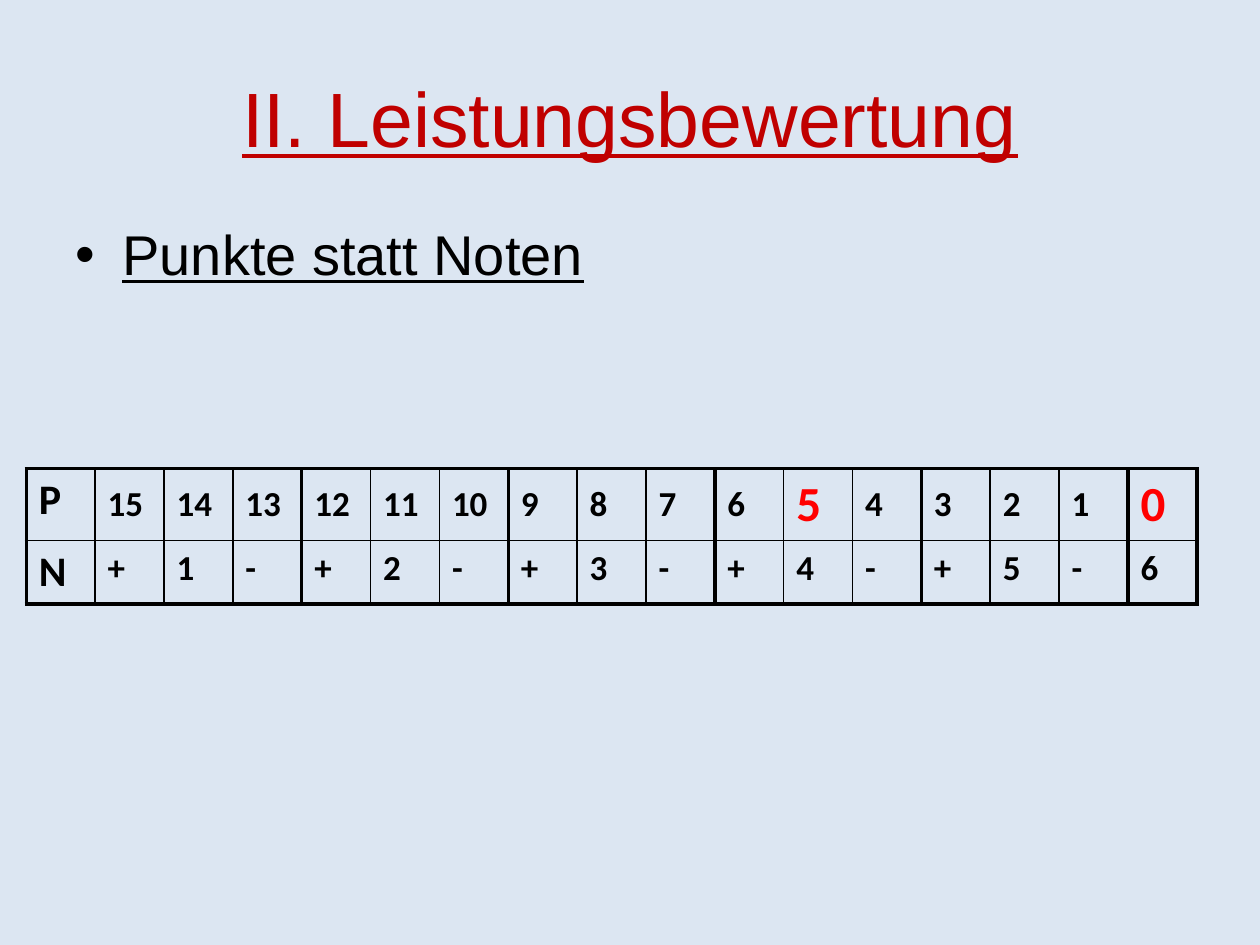
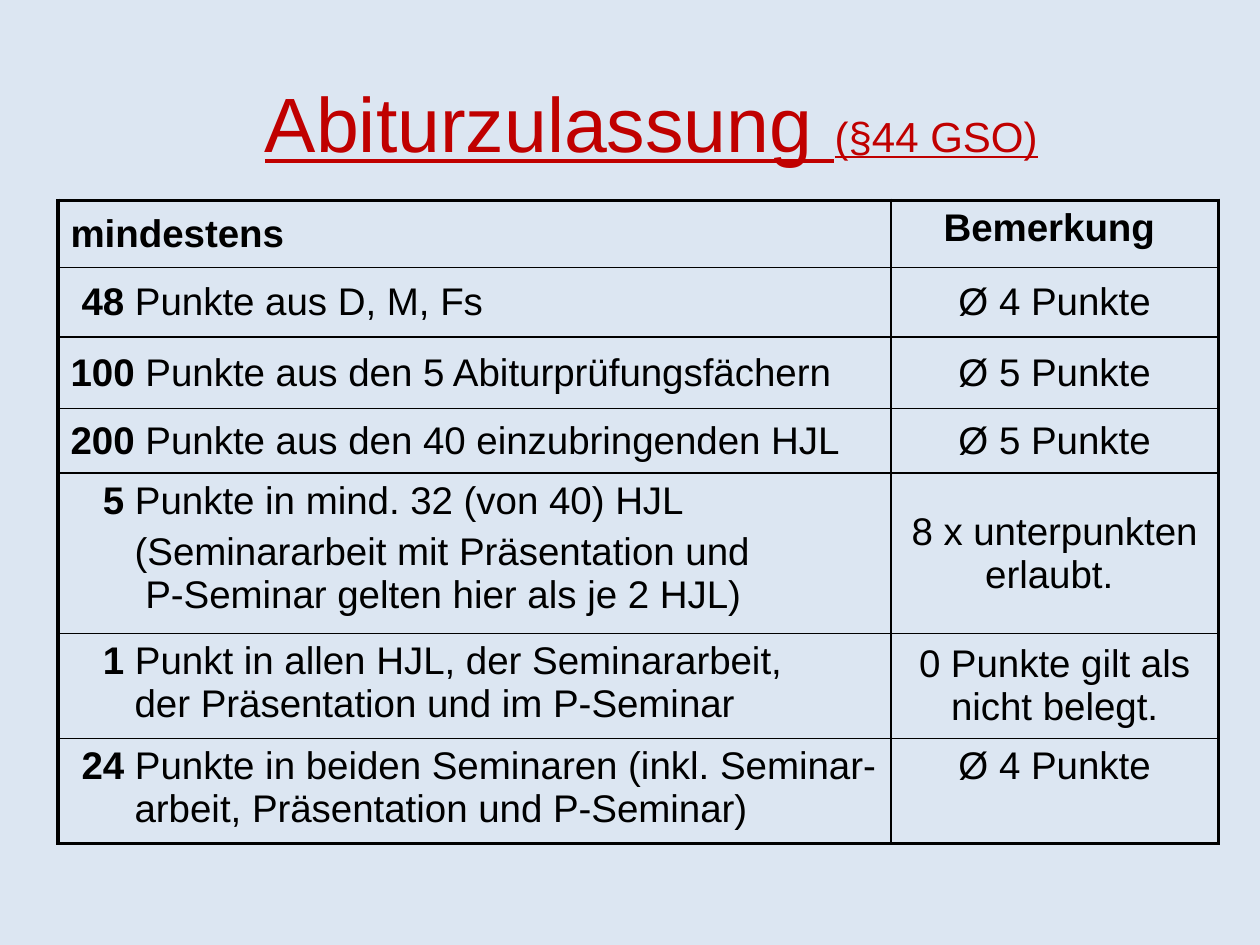
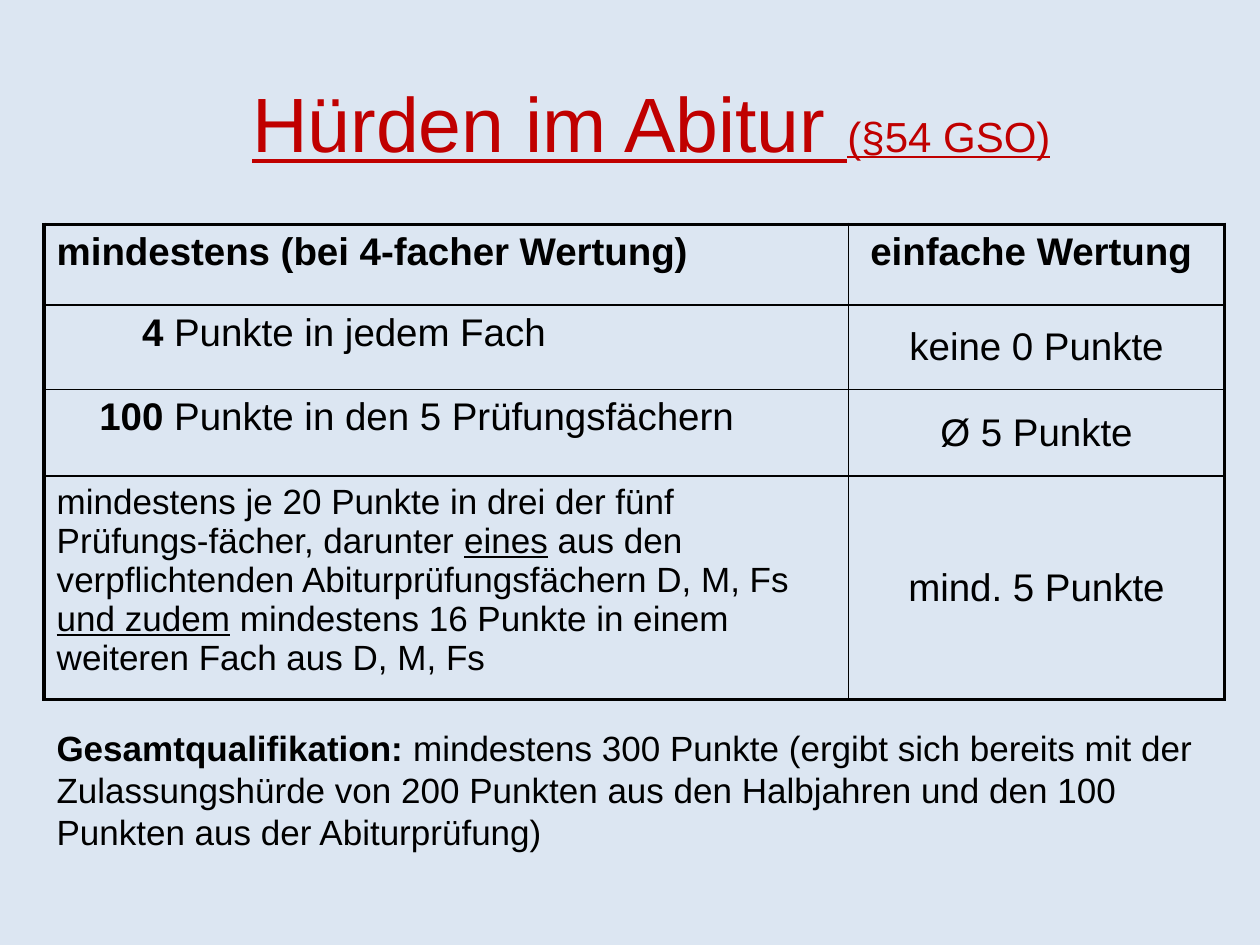
from lxml.etree import SubElement
from pptx import Presentation
from pptx.dml.color import RGBColor
from pptx.enum.text import MSO_ANCHOR, PP_ALIGN
from pptx.oxml.ns import qn
from pptx.util import Cm, Pt

BACK, RED, BLACK, HOT = "DCE6F2", "C00000", "000000", "FF0000"
THIN, THICK = 1, 2.25
BOLD = {"bold": True}
LINE = {"line": True}
MID = MSO_ANCHOR.MIDDLE


def paint(code):
    return RGBColor.from_string(code)


def write(frame, runs, size=22, font="Arial", color=BLACK, bold=False, line=False,
          align=PP_ALIGN.LEFT, left=0, first=0, before=0, space=None, mark=None):
    """Add one paragraph; runs is a string or a list of strings and (string, format) pairs."""
    para = frame.paragraphs[0]
    if para.runs:
        para = frame.add_paragraph()
    para.alignment = align
    para.space_before = Pt(before)
    para.line_spacing = space
    props = para._p.get_or_add_pPr()
    props.set("marL", str(Cm(left)))
    props.set("indent", str(Cm(first - left)))
    if mark:
        SubElement(props, qn("a:buFont")).set("typeface", font)
        SubElement(props, qn("a:buChar")).set("char", mark)
    for part in [runs] if isinstance(runs, str) else runs:
        text, form = (part, {}) if isinstance(part, str) else part
        for i, row in enumerate(text.split("\n")):
            if i:
                para.add_line_break()
            run = para.add_run()
            run.text = row
            run.font.name = font
            run.font.size = Pt(form.get("size", size))
            run.font.bold = form.get("bold", bold)
            run.font.underline = form.get("line", line)
            run.font.color.rgb = paint(color)


def add_text(slide, box, runs, anchor=MSO_ANCHOR.TOP, **form):
    frame = slide.shapes.add_textbox(*map(Cm, box)).text_frame
    frame.word_wrap = True
    frame.vertical_anchor = anchor
    write(frame, runs, **form)


def add_page(deck, title, box):
    """Blank slide with the shared background and title style."""
    slide = deck.slides.add_slide(deck.slide_layouts[6])
    slide.background.fill.solid()
    slide.background.fill.fore_color.rgb = paint(BACK)
    add_text(slide, box, title, MID, size=44, color=RED, line=True, align=PP_ALIGN.CENTER)
    return slide


def edge(cell, side, width):
    ln = SubElement(cell._tc.get_or_add_tcPr(), qn("a:" + side), w=str(Pt(width)))
    fill = SubElement(ln, qn("a:solidFill"))
    SubElement(fill, qn("a:srgbClr")).set("val", BLACK)


def add_grid(slide, spot, cols, rows, heavy=()):
    """Clear table with thick outer borders and thick verticals at the heavy edges."""
    wide, high = len(cols), len(rows)
    table = slide.shapes.add_table(high, wide, *map(Cm, (*spot, sum(cols), sum(rows)))).table
    table.first_row = table.horz_banding = False
    for col, width in zip(table.columns, cols):
        col.width = Cm(width)
    for row, height in zip(table.rows, rows):
        row.height = Cm(height)
    thick = {0, wide, *heavy}
    for r in range(high):
        for c in range(wide):
            cell = table.cell(r, c)
            edge(cell, "lnL", THICK if c in thick else THIN)
            edge(cell, "lnR", THICK if c + 1 in thick else THIN)
            edge(cell, "lnT", THICK if r == 0 else THIN)
            edge(cell, "lnB", THICK if r == high - 1 else THIN)
            cell.fill.background()
    return table


def fill_scale(table):
    """Points in the top row, matching grades below."""
    points = ["P", *map(str, range(15, -1, -1))]
    grades = ["N"]
    for grade in "12345":
        grades += ["+", grade, "-"]
    grades.append("6")
    for r, texts in enumerate((points, grades)):
        for c, text in enumerate(texts):
            cell = table.cell(r, c)
            hot = r == 0 and text in ("5", "0")
            cell.vertical_anchor = MID if r == 0 and c else MSO_ANCHOR.TOP
            write(cell.text_frame, text, font="Calibri", bold=True,
                  size=28 if hot else 20 if c else 24, color=HOT if hot else BLACK)


def fill_rules(table, rules):
    """Each rule: left paragraphs, right text, and which cells are centred upright."""
    for r, (paras, note, mids) in enumerate(rules):
        left, right = table.cell(r, 0), table.cell(r, 1)
        for cell, mid in zip((left, right), mids):
            cell.vertical_anchor = MID if mid else MSO_ANCHOR.TOP
        for runs, form in paras:
            write(left.text_frame, runs, bold=r == 0, **form)
        write(right.text_frame, note, bold=r == 0, align=PP_ALIGN.CENTER)


def rule(count, text, first=0, left=1.29):
    return [(count, BOLD), " " + text], {"first": first, "left": left}


def show_scale(deck):
    slide = add_page(deck, "II. Leistungsbewertung", (1.27, 0.76, 22.86, 3.18))
    add_text(slide, (1.27, 4.45, 22.86, 6.27), "Punkte statt Noten", size=32, line=True,
             left=0.95, before=8, space=0.9, mark="•")
    table = add_grid(slide, (0.53, 9.45), [23.6 / 17] * 17, [1.45, 1.28], range(4, 17, 3))
    fill_scale(table)


def show_entry(deck):
    slide = add_page(deck, ["Abiturzulassung ", ("(§44 GSO)", {"size": 24})], SIDE)
    table = add_grid(slide, (1.17, 4.04), [16.79, 6.6],
                     [1.35, 1.4, 1.45, 1.3, 3.23, 2.11, 2.11])
    fill_rules(table, [
        ([("mindestens", {})], "Bemerkung ", (1, 0)),
        ([rule("48", "Punkte aus D, M, Fs", 0.22)], "Ø 4 Punkte", (1, 1)),
        ([rule("100", "Punkte aus den 5 Abiturprüfungsfächern")], "Ø 5 Punkte", (1, 1)),
        ([rule("200", "Punkte aus den 40 einzubringenden HJL")], "Ø 5 Punkte", (1, 1)),
        ([rule("5", "Punkte in mind. 32 (von 40) HJL", 0.65),
          ("(Seminararbeit mit Präsentation und\n P-Seminar gelten hier als je 2 HJL)",
           {"first": 1.29, "left": 1.29, "before": 4.4})],
         "8 x unterpunkten erlaubt. ", (0, 1)),
        ([rule("1", "Punkt in allen HJL, der Seminararbeit,\n"
               "der Präsentation und im P-Seminar", 0.65)],
         "0 Punkte gilt als nicht belegt.", (0, 1)),
        ([rule("24", "Punkte in beiden Seminaren (inkl. Seminar-\n"
               "arbeit, Präsentation und P-Seminar)", 0.22)], "Ø 4 Punkte", (0, 0)),
    ])


def show_hurdles(deck):
    slide = add_page(deck, ["Hürden im Abitur ", ("(§54 GSO)", {"size": 24})], SIDE)
    table = add_grid(slide, (0.89, 4.52), [16.21, 7.59], [1.63, 1.7, 1.75, 4.5])
    fill_rules(table, [
        ([("mindestens (bei 4-facher Wertung)", {})], "einfache Wertung ", (0, 0)),
        ([rule("4", "Punkte in jedem Fach", 1.72, 1.72)], "keine 0 Punkte", (0, 1)),
        ([rule("100", "Punkte in den 5 Prüfungsfächern", 0.86, 0.86)], "Ø 5 Punkte", (0, 1)),
        ([(["mindestens je 20 Punkte in drei der fünf Prüfungs-fächer, darunter ",
            ("eines", LINE),
            " aus den verpflichtenden Abiturprüfungsfächern D, M, Fs ",
            ("und zudem", LINE),
            " mindestens 16 Punkte in einem weiteren Fach aus D, M, Fs"], {"size": 20})],
         "mind. 5 Punkte", (0, 1)),
    ])
    # Closing note under the table
    add_text(slide, (0.89, 14.53, 23.8, 2.82), [
        ("Gesamtqualifikation:", BOLD),
        " mindestens 300 Punkte (ergibt sich bereits mit der Zulassungshürde von 200 Punkten "
        "aus den Halbjahren und den 100 Punkten aus der Abiturprüfung)"], size=20)


# Title box shared by the two rule slides
SIDE = (1.7, 0.86, 22.86, 3.18)


def main():
    deck = Presentation()
    deck.slide_width, deck.slide_height = Cm(25.4), Cm(19.05)
    for show in (show_scale, show_entry, show_hurdles):
        show(deck)
    deck.save("out.pptx")


if __name__ == "__main__":
    main()
